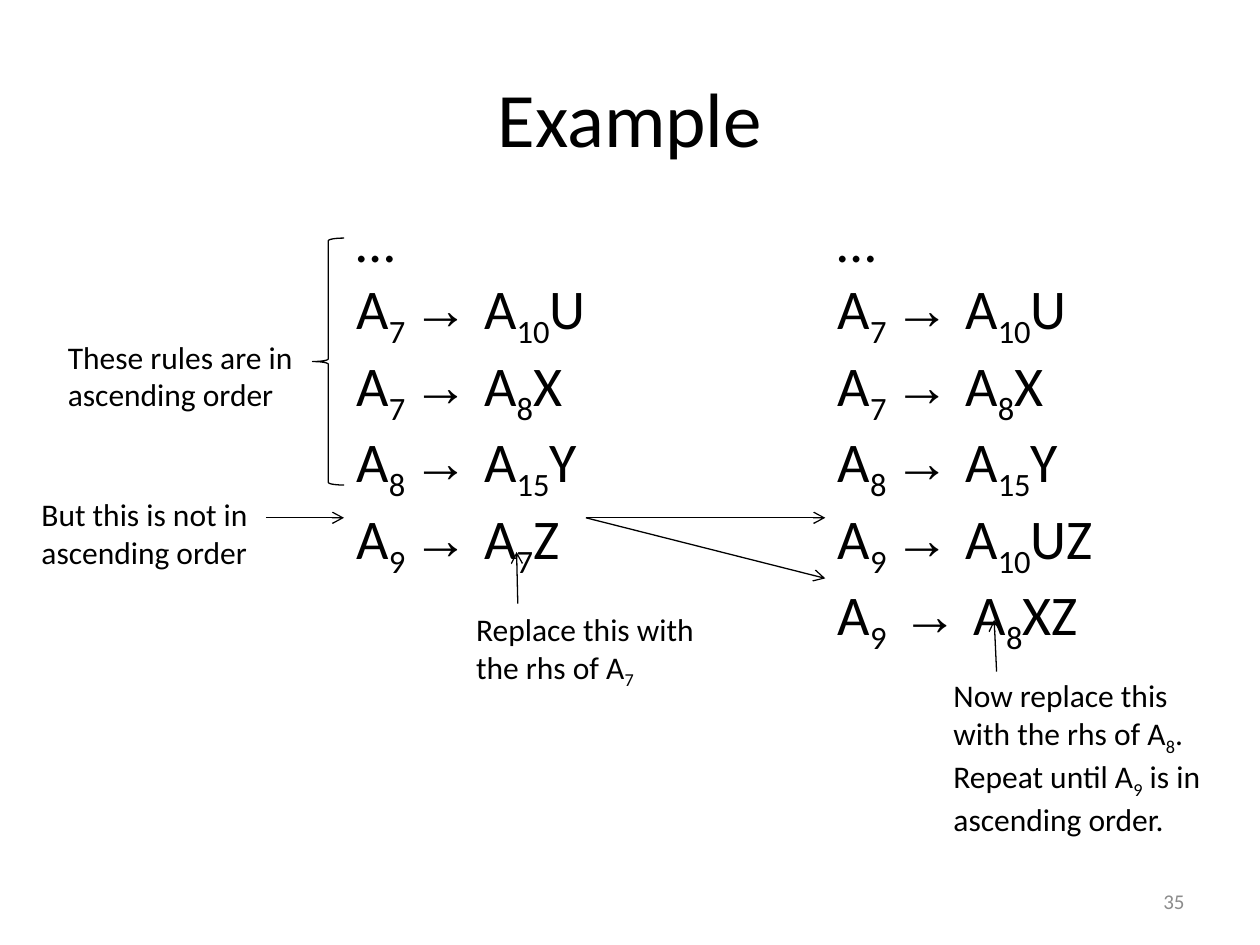
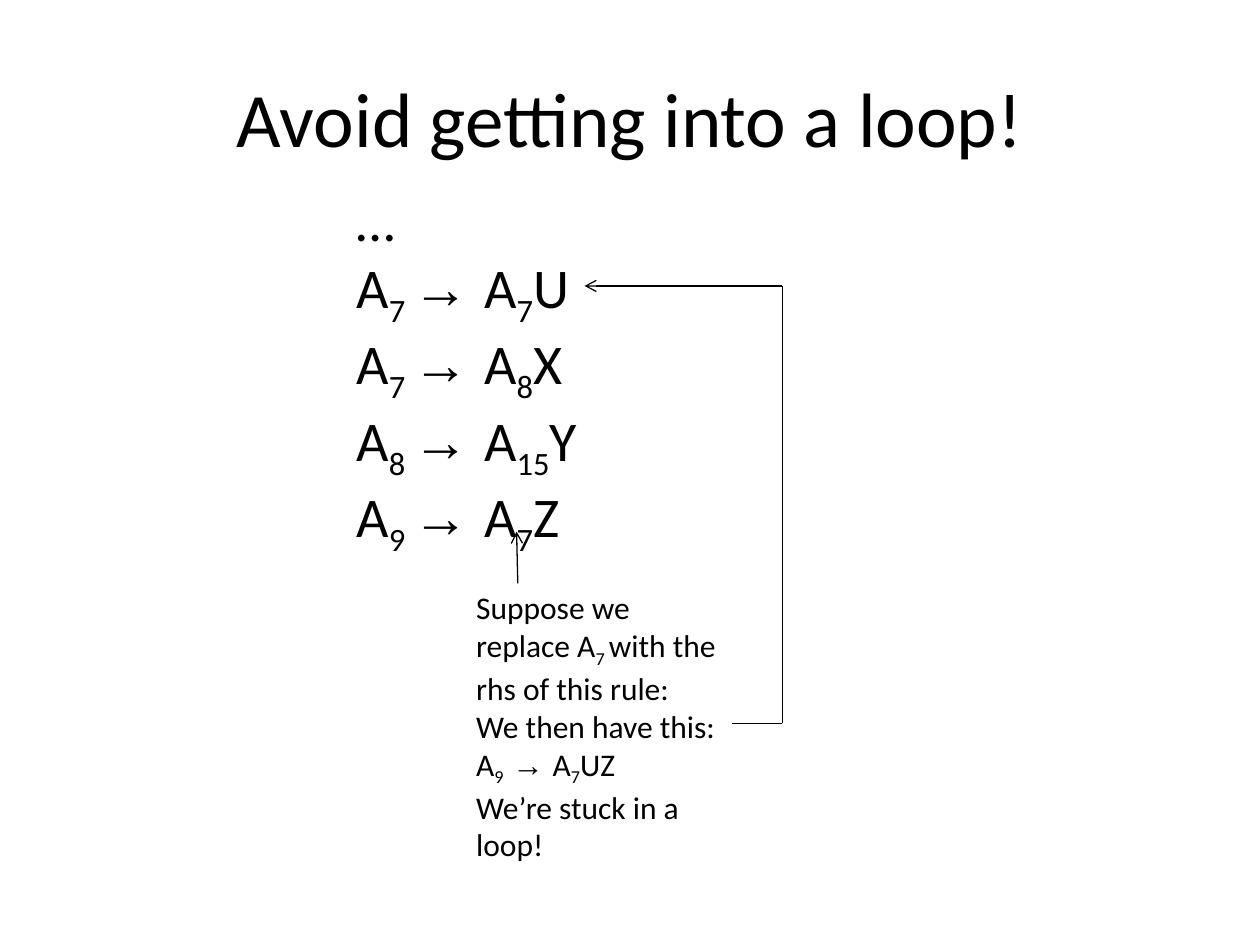
from lxml import etree
from pptx import Presentation
from pptx.dml.color import RGBColor
from pptx.enum.shapes import MSO_CONNECTOR, MSO_SHAPE
from pptx.enum.text import MSO_ANCHOR, MSO_AUTO_SIZE, PP_ALIGN
from pptx.oxml.ns import qn
from pptx.util import Pt

STRAIGHT = MSO_CONNECTOR.STRAIGHT
BRACE = MSO_SHAPE.LEFT_BRACE
MIDDLE = MSO_ANCHOR.MIDDLE
GROW = MSO_AUTO_SIZE.SHAPE_TO_FIT_TEXT
RIGHT = PP_ALIGN.RIGHT

COLORS = {"ink": "000000", "number": "8C8C8C"}
FONT = "Calibri"
ARROW_FONT = "Arial"
ARROW = "→ "
RULE_SIZE = 32
NOTE_SIZE = 18


def add_text(s, box, lines, size, wrap=True, color="ink"):
    sp = s.shapes.add_textbox(*[Pt(v) for v in box])
    tf = sp.text_frame
    tf.word_wrap = wrap
    tf.auto_size = GROW
    for i, line in enumerate(lines):
        p = tf.add_paragraph() if i else tf.paragraphs[0]
        for j, part in enumerate(line.split("_")):
            before, arrow, after = part.partition(ARROW)
            pieces = [(before + arrow, ARROW_FONT if arrow else FONT), (after, FONT)]
            for text, font in pieces:
                if not text:
                    continue
                r = p.add_run()
                r.text = text
                r.font.name = font
                r.font.size = Pt(size)
                r.font.color.rgb = RGBColor.from_string(COLORS[color])
                if j % 2:
                    r.font._element.set("baseline", "-25000")
    return tf


def add_line(s, start, end, head=True):
    c = s.shapes.add_connector(STRAIGHT, *[Pt(v) for v in start + end])
    c.line.color.rgb = RGBColor.from_string(COLORS["ink"])
    c.line.width = Pt(0.75)
    spPr = c.element.spPr
    if head:
        etree.SubElement(spPr.find(qn("a:ln")), qn("a:tailEnd"), type="arrow")
    etree.SubElement(spPr, qn("a:effectLst"))


prs = Presentation()
prs.slide_width = Pt(720)
prs.slide_height = Pt(540)

slides = []
for title in ["Example", "Avoid getting into a loop!"]:
    s = prs.slides.add_slide(prs.slide_layouts[5])
    sp = s.shapes.title
    sp.left, sp.top, sp.width, sp.height = Pt(36), Pt(21.6), Pt(648), Pt(90)
    tf = sp.text_frame
    tf.text = title
    tf.vertical_anchor = MIDDLE
    r = tf.paragraphs[0].runs[0]
    r.font.name = FONT
    r.font.size = Pt(44)
    r.font.color.rgb = RGBColor.from_string(COLORS["ink"])
    slides.append(s)
example, loop = slides

shared_rules = ["A_7 _→ A_8_X", "A_8 _→ A_15_Y"]
ascending_rules = ["…", "A_7 _→ A_10_U"] + shared_rules
last_rule = "A_9 _→ A_7_Z"
replaced_rules = ["A_9 _→ A_10_UZ", "A_9_ → A_8_XZ"]

rule_blocks = [
    (example, (196.6, 114.5, 161.3, 200.9), ascending_rules + [last_rule]),
    (example, (471.6, 114.5, 172.8, 239.8), ascending_rules + replaced_rules),
    (loop, (196.6, 102.2, 159.1, 200.9), ["…", "A_7 _→ A_7_U"] + shared_rules + [last_rule]),
]
for s, box, rules in rule_blocks:
    add_text(s, box, rules, RULE_SIZE, wrap=False)

notes = [
    (example, (31.7, 189.4, 155.5, 51), ["These rules are in ascending order"]),
    (example, (16.6, 279.4, 148.3, 51), ["But this is not in ascending order"]),
    (example, (265, 344.9, 140.4, 51), ["Replace this with the rhs of A_7_"]),
    (example, (537.8, 383, 168.5, 94.3),
     ["Now replace this with the rhs of A_8_. Repeat until A_9_ is in ascending order."]),
    (loop, (265, 332.6, 153.4, 159.8),
     ["Suppose we replace A_7 _with the rhs of this rule:",
      "We then have this: A_9_ → A_7_UZ",
      "We’re stuck in a loop!"]),
]
for s, box, lines in notes:
    add_text(s, box, lines, NOTE_SIZE)

sp = example.shapes.add_shape(BRACE, Pt(178.6), Pt(136.1), Pt(18), Pt(141.1))
sp.shadow.inherit = False
sp.fill.background()
sp.line.color.rgb = RGBColor.from_string(COLORS["ink"])
sp.line.width = Pt(0.75)

arrows = [
    (example, (151.9, 295.9), (196.6, 295.9)),
    (example, (295.9, 344.9), (295.2, 315.4)),
    (example, (569.5, 383.8), (568.1, 354.2)),
    (example, (334.8, 295.9), (471.6, 295.9)),
    (example, (334.8, 295.9), (471.6, 330.5)),
    (loop, (295.9, 333.4), (295.2, 303.8)),
]
for s, start, end in arrows:
    add_line(s, start, end)

loop_path = [(418.3, 413.3), (447.1, 413.3), (447.1, 163.4), (334.1, 163.4)]
for start, end in zip(loop_path, loop_path[1:]):
    add_line(loop, start, end, head=end == loop_path[-1])

tf = add_text(example, (516.2, 500.4, 167.8, 28.8), ["35"], 12, color="number")
tf.auto_size = MSO_AUTO_SIZE.NONE
tf.vertical_anchor = MIDDLE
tf.paragraphs[0].alignment = RIGHT

prs.save("out.pptx")
